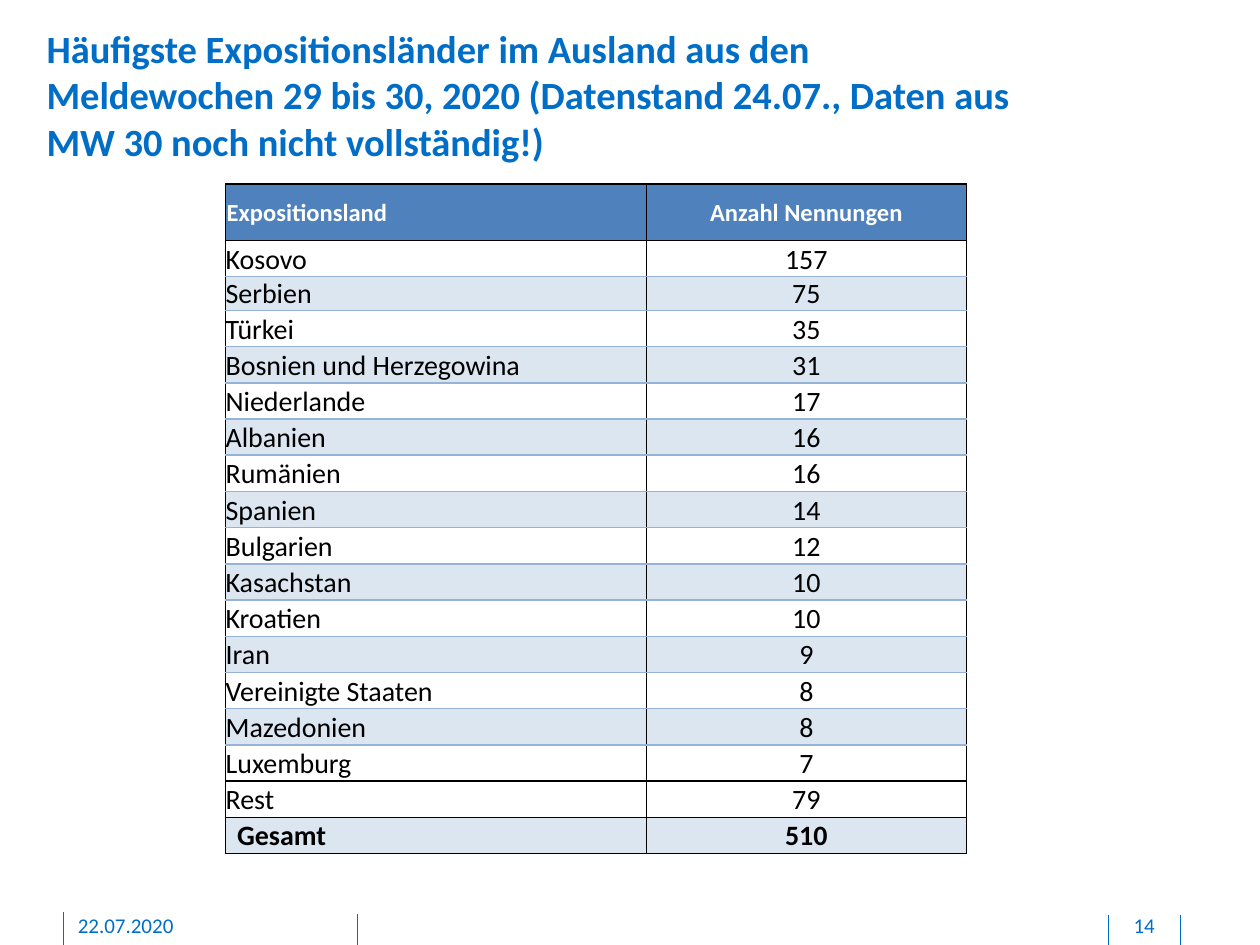
import pptx
import pptx.util
import pptx.dml.color
import pptx.enum.shapes
import pptx.enum.text
import pptx.oxml
from lxml import etree

Cm, Pt = pptx.util.Cm, pptx.util.Pt
ALIGN = pptx.enum.text.PP_ALIGN
ANCHOR = pptx.enum.text.MSO_ANCHOR

TITLE = ("Häufigste Expositionsländer im Ausland aus den Meldewochen 29 bis 30, 2020 "
         "(Datenstand 24.07., Daten aus MW 30 noch nicht vollständig!)")
DATE = "22.07.2020"
PAGE_NUMBER = "14"
HEADER = ("Expositionsland", "Anzahl Nennungen")
COUNTRIES = [
    ("Kosovo", 157), ("Serbien", 75), ("Türkei", 35), ("Bosnien und Herzegowina", 31),
    ("Niederlande", 17), ("Albanien", 16), ("Rumänien", 16), ("Spanien", 14),
    ("Bulgarien", 12), ("Kasachstan", 10), ("Kroatien", 10), ("Iran", 9),
    ("Vereinigte Staaten", 8), ("Mazedonien", 8), ("Luxemburg", 7),
]
REST = ("Rest", 79)
TOTAL = ("Gesamt", 510)

COLORS = {"brand": "006EC7", "header": "4F81BD", "band": "DCE6F1",
          "rule": "95B3D7", "black": "000000", "white": "FFFFFF"}
FONT = "Calibri"

TABLE_LEFT, TABLE_TOP = 4.55, 3.71
COLUMN_WIDTHS = (8.48, 6.45)
HEADER_HEIGHT, ROW_HEIGHT, SERBIA_HEIGHT = 1.14, 0.73, 0.67
# x and top of each footer divider
DIVIDERS = [(7.21, 18.42), (1.27, 18.39), (23.8, 18.44), (22.35, 18.44)]
SLIDE_WIDTH, SLIDE_HEIGHT = 25.4, 19.05


def rgb(name):
    return pptx.dml.color.RGBColor.from_string(COLORS[name])


def format_paragraph(paragraph, size, color, bold=False, align=ALIGN.LEFT):
    paragraph.alignment = align
    for run in paragraph.runs:
        run.font.name = FONT
        run.font.size = Pt(size)
        run.font.bold = bold
        run.font.color.rgb = rgb(color)


def add_text(slide, text, box, size, bold=False, align=ALIGN.LEFT, bottom=0):
    shape = slide.shapes.add_textbox(*(Cm(length) for length in box))
    frame = shape.text_frame
    frame.word_wrap = True
    frame.margin_left = frame.margin_top = frame.margin_right = 0
    frame.margin_bottom = Cm(bottom)
    frame.text = text
    format_paragraph(frame.paragraphs[0], size, "brand", bold, align)


def add_divider(slide, x, top):
    line = slide.shapes.add_connector(pptx.enum.shapes.MSO_CONNECTOR.STRAIGHT,
                                      Cm(x), Cm(top), Cm(x), Cm(SLIDE_HEIGHT))
    line.line.color.rgb = rgb("brand")
    line.line.width = Pt(0.5)
    etree.SubElement(line._element.spPr, pptx.oxml.ns.qn("a:effectLst"))


def set_borders(cell, top, bottom):
    """Draw black sides and the given top and bottom; call before setting the fill."""
    properties = cell._tc.get_or_add_tcPr()
    for side, color in (("L", "black"), ("R", "black"), ("T", top), ("B", bottom)):
        line = etree.SubElement(properties, pptx.oxml.ns.qn(f"a:ln{side}"), w=str(Pt(1)))
        fill = etree.SubElement(line, pptx.oxml.ns.qn("a:solidFill"))
        etree.SubElement(fill, pptx.oxml.ns.qn("a:srgbClr"), val=COLORS[color])


def add_country_table(slide):
    rows = [HEADER, *COUNTRIES, REST, TOTAL]
    last = len(rows) - 1
    heights = [HEADER_HEIGHT] + [ROW_HEIGHT] * last
    heights[2] = SERBIA_HEIGHT
    table = slide.shapes.add_table(
        len(rows), len(HEADER), Cm(TABLE_LEFT), Cm(TABLE_TOP),
        Cm(sum(COLUMN_WIDTHS)), Cm(sum(heights))).table
    table.horz_banding = False
    for column, width in zip(table.columns, COLUMN_WIDTHS):
        column.width = Cm(width)

    # One colour for each horizontal line, from the table top to its bottom
    rules = ["black"] * 2 + ["rule"] * (len(COUNTRIES) - 1) + ["black"] * 3
    for r, values in enumerate(rows):
        table.rows[r].height = Cm(heights[r])
        is_header, is_total = r == 0, r == last
        emphasized = is_header or is_total
        banded = is_total or (r % 2 == 0 and 0 < r <= len(COUNTRIES))
        for c, value in enumerate(values):
            cell = table.cell(r, c)
            set_borders(cell, rules[r], rules[r + 1])
            if is_header or banded:
                cell.fill.solid()
                cell.fill.fore_color.rgb = rgb("header" if is_header else "band")
            else:
                cell.fill.background()
            margin = Cm(0.02) if emphasized else 0
            cell.margin_left = cell.margin_right = cell.margin_top = margin
            cell.margin_bottom = 0
            cell.vertical_anchor = ANCHOR.MIDDLE if emphasized else ANCHOR.BOTTOM
            cell.text_frame.text = str(value)
            paragraph = cell.text_frame.paragraphs[0]
            format_paragraph(paragraph, 14 if is_header else 16,
                             "white" if is_header else "black", emphasized,
                             ALIGN.CENTER if c else ALIGN.LEFT)
            if is_total and c == 0:
                paragraph_properties = paragraph._p.get_or_add_pPr()
                paragraph_properties.set("marL", str(Cm(0.21)))
                paragraph_properties.set("indent", "0")


def main():
    presentation = pptx.Presentation()
    presentation.slide_width = Cm(SLIDE_WIDTH)
    presentation.slide_height = Cm(SLIDE_HEIGHT)
    slide = presentation.slides.add_slide(presentation.slide_layouts[6])

    for x, top in DIVIDERS:
        add_divider(slide, x, top)
    add_text(slide, TITLE, (0.94, 0.51, 19.66, 2.82), 22, bold=True)
    add_text(slide, DATE, (1.57, 18.39, 5.16, 0.53), 12, bottom=0.13)
    add_text(slide, PAGE_NUMBER, (22.38, 18.39, 1.37, 0.53), 12,
             align=ALIGN.CENTER, bottom=0.13)
    add_country_table(slide)
    presentation.save("out.pptx")


if __name__ == "__main__":
    main()
